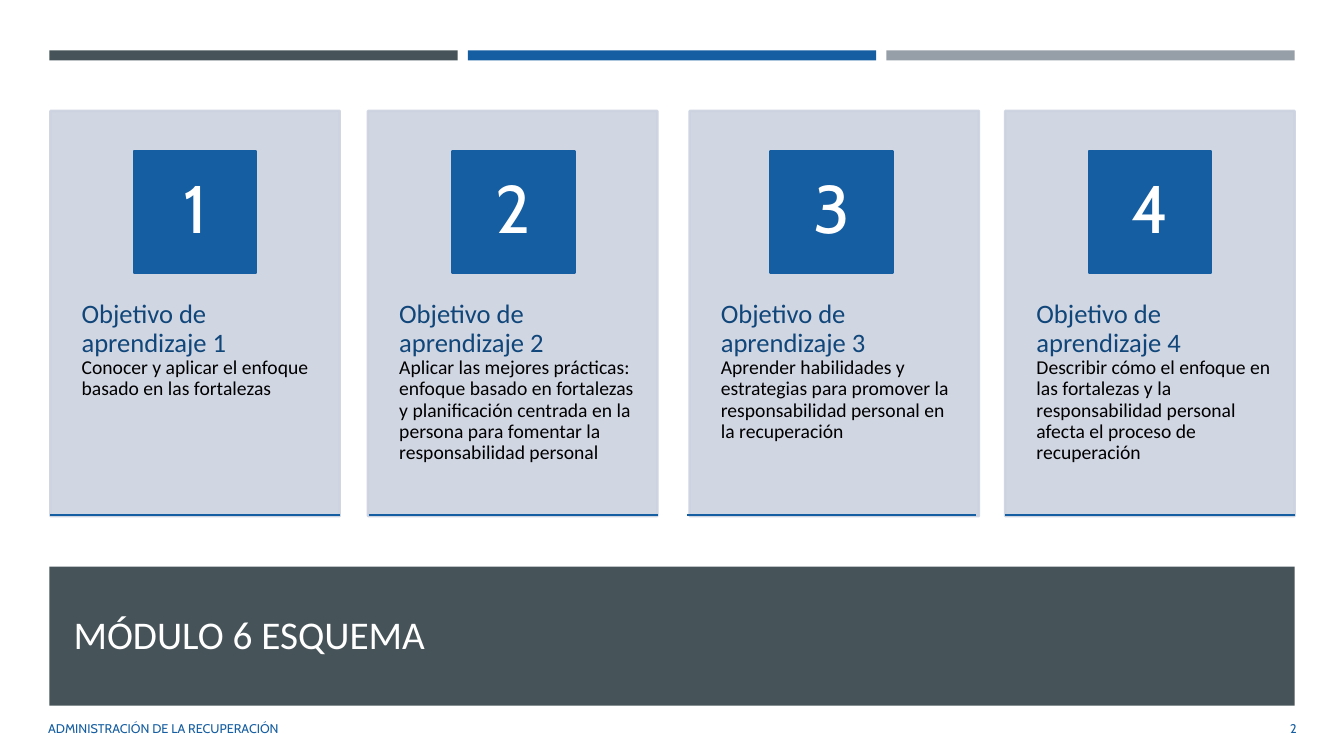
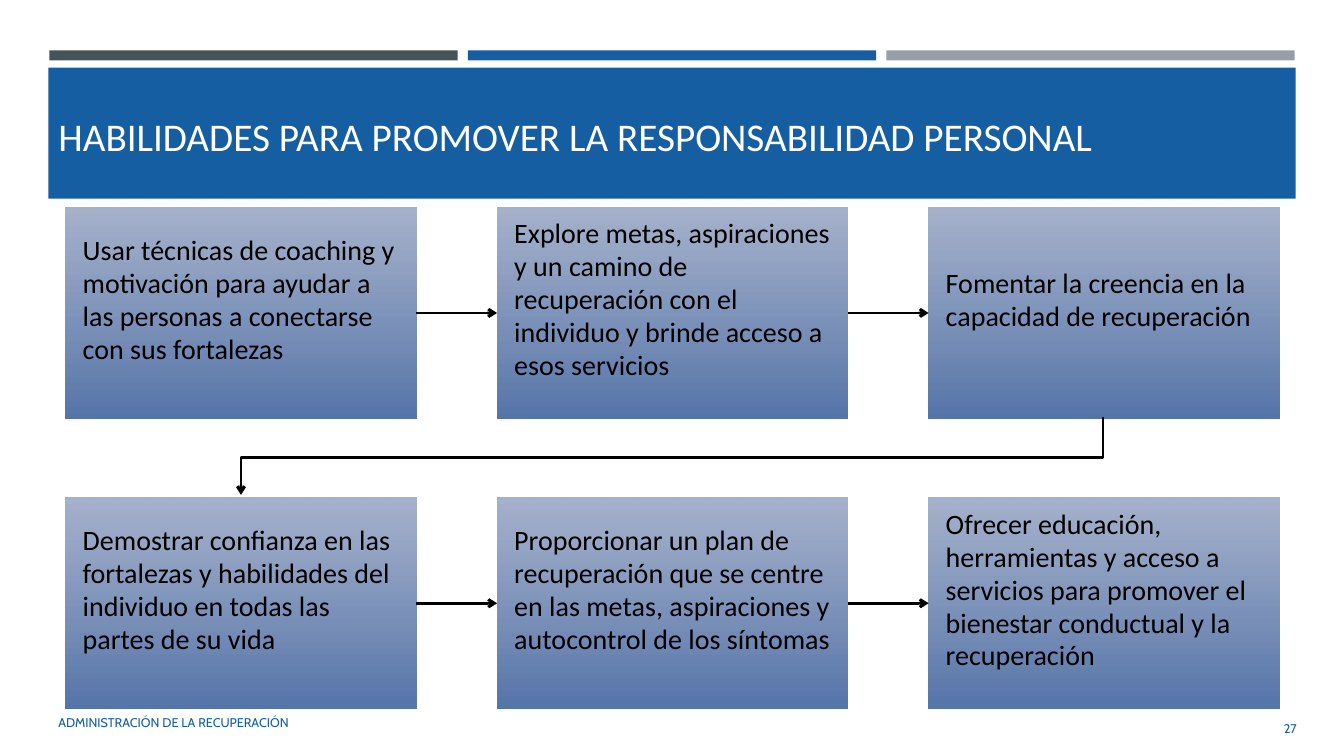
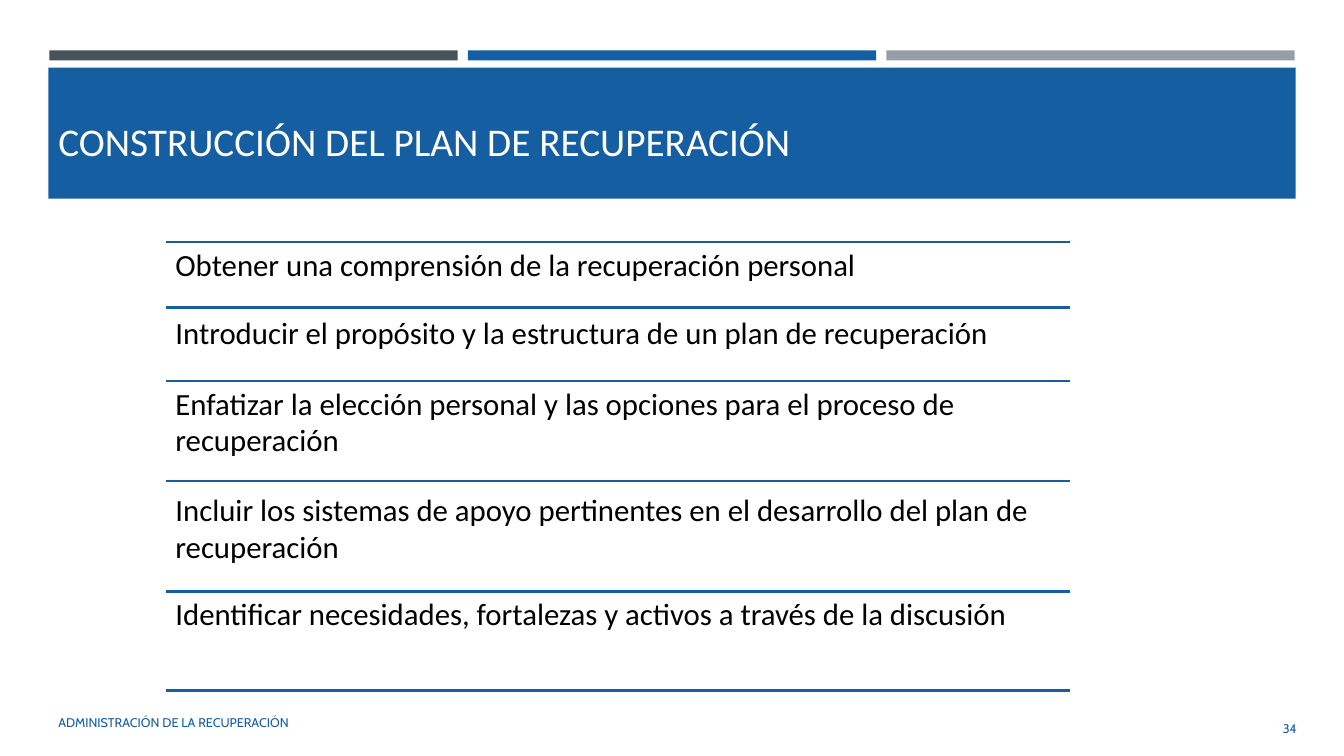
from lxml import etree
from pptx import Presentation
from pptx.dml.color import RGBColor
from pptx.enum.shapes import MSO_CONNECTOR as Link, MSO_SHAPE as Preset
from pptx.enum.text import MSO_ANCHOR as Anchor, MSO_AUTO_SIZE as AutoSize, PP_ALIGN as Align
from pptx.oxml.ns import qn
from pptx.util import Inches, Pt

SLATE = RGBColor(0x46, 0x53, 0x59)
BLUE = RGBColor(0x15, 0x5E, 0xA1)
GREY = RGBColor(0x96, 0x9F, 0xA7)
NAVY = RGBColor(0x10, 0x46, 0x79)
PANEL = RGBColor(0xCC, 0xD2, 0xE0)
STEP_TOP = RGBColor(0x9C, 0xA9, 0xC6)
STEP_BOTTOM = RGBColor(0x56, 0x75, 0xA9)
WHITE = RGBColor(0xFF, 0xFF, 0xFF)
BLACK = RGBColor(0, 0, 0)

FOOTER = "ADMINISTRACIÓN DE LA RECUPERACIÓN"
OUTLINE = "MÓDULO 6 ESQUEMA"
SKILLS = "HABILIDADES PARA PROMOVER LA RESPONSABILIDAD PERSONAL"
PLAN = "CONSTRUCCIÓN DEL PLAN DE RECUPERACIÓN"

GOAL = "Objetivo de aprendizaje"
GOALS = [
    (0.5, "Conocer y aplicar el enfoque basado en las fortalezas"),
    (3.65, "Aplicar las mejores prácticas: enfoque basado en fortalezas y planificación "
           "centrada en la persona para fomentar la responsabilidad personal"),
    (6.84, "Aprender habilidades y estrategias para promover la responsabilidad personal "
           "en la recuperación"),
    (9.97, "Describir cómo el enfoque en las fortalezas y la responsabilidad personal "
           "afecta el proceso de recuperación"),
]
STEPS = [
    "Usar técnicas de coaching y motivación para ayudar a las personas a conectarse "
    "con sus fortalezas",
    "Explore metas, aspiraciones y un camino de recuperación con el individuo y brinde "
    "acceso a esos servicios",
    "Fomentar la creencia en la capacidad de recuperación",
    "Demostrar confianza en las fortalezas y habilidades del individuo en todas las "
    "partes de su vida",
    "Proporcionar un plan de recuperación que se centre en las metas, aspiraciones y "
    "autocontrol de los síntomas",
    "Ofrecer educación, herramientas y acceso a servicios para promover el bienestar "
    "conductual y la recuperación",
]
PLAN_ROWS = [
    (2.4, 2.37, "Obtener una comprensión de la recuperación personal"),
    (3.05, 3.04, "Introducir el propósito y la estructura de un plan de recuperación"),
    (3.78, 3.74, "Enfatizar la elección personal y las opciones para el proceso de recuperación"),
    (4.77, 4.8, "Incluir los sistemas de apoyo pertinentes en el desarrollo del plan de recuperación"),
    (5.87, 5.83, "Identificar necesidades, fortalezas y activos a través de la discusión"),
]
PLAN_END = 6.85


def inches(*values):
    return [Inches(value) for value in values]


def style(item, **values):
    for name, value in values.items():
        setattr(item, name, value)


def write(shape, parts, anchor=Anchor.TOP, align=Align.LEFT, spacing=1.0,
          insets=(0.1, 0.05, 0.1, 0.05)):
    frame = shape.text_frame
    left, top, right, bottom = inches(*insets)
    style(frame, word_wrap=True, auto_size=AutoSize.NONE, vertical_anchor=anchor,
          margin_left=left, margin_top=top, margin_right=right, margin_bottom=bottom)
    para = frame.paragraphs[0]
    style(para, alignment=align, line_spacing=spacing)
    for index, (text, face, size, colour) in enumerate(parts):
        if index:
            para.add_line_break()
        span = para.add_run()
        span.text = text
        style(span.font, name=face, size=Pt(size))
        span.font.color.rgb = colour


def add_text(page, place, parts, **layout):
    box = page.shapes.add_textbox(*inches(*place))
    write(box, parts, **layout)
    return box


def add_block(page, place, fill=None, line=None):
    block = page.shapes.add_shape(Preset.RECTANGLE, *inches(*place))
    block.shadow.inherit = False
    if fill is not None:
        block.fill.solid()
        block.fill.fore_color.rgb = fill
    if line is None:
        block.line.fill.background()
    else:
        block.line.color.rgb = line
        block.line.width = Pt(1.75)
    return block


def fade(colour_node, percent=90):
    etree.SubElement(colour_node, qn("a:alpha")).set("val", str(percent * 1000))


def add_line(page, start, end, colour, width):
    line = page.shapes.add_connector(Link.STRAIGHT, *inches(*start, *end))
    line.line.color.rgb = colour
    line.line.width = Pt(width)
    etree.SubElement(line.element.spPr, qn("a:effectLst"))
    return line


def add_arrowhead(shape):
    outline = shape.line._get_or_add_ln()
    etree.SubElement(outline, qn("a:tailEnd")).set("type", "arrow")


def new_page(deck, title, number, band, band_colour, title_place, footer_place):
    page = deck.slides.add_slide(deck.slide_layouts[5])
    for column, colour in enumerate((SLATE, BLUE, GREY)):
        add_block(page, (0.49 + column * 4.15, 0.5, 4.05, 0.1), colour)
    add_block(page, band, band_colour)
    heading = page.shapes.title
    left, top, width, height = inches(*title_place)
    style(heading, left=left, top=top, width=width, height=height)
    write(heading, [(title, "Calibri", 28, WHITE)], anchor=Anchor.MIDDLE)
    page.shapes.element.append(heading.element)
    add_text(page, footer_place, [(FOOTER, "Cabin", 9, BLUE)], anchor=Anchor.MIDDLE)
    add_text(page, (11.81, 7.03, 1.15, 0.4), [(str(number), "Cabin", 9, BLUE)],
             anchor=Anchor.MIDDLE, align=Align.RIGHT)
    return page


def blue_page(deck, title, number, title_top):
    return new_page(deck, title, number, (0.48, 0.67, 12.37, 1.3), BLUE,
                    (0.48, title_top, 12.37, 1.11), (0.48, 6.97, 7.46, 0.4))


def outline_page(deck):
    page = new_page(deck, OUTLINE, 2, (0.49, 5.62, 12.35, 1.38), SLATE,
                    (0.63, 5.76, 12.06, 1.05), (0.38, 7.03, 7.56, 0.4))
    width, badge_side = 2.87, 1.21
    pitch = (GOALS[-1][0] - GOALS[0][0]) / (len(GOALS) - 1)
    for index, (left, goal) in enumerate(GOALS):
        column = GOALS[0][0] + index * pitch
        panel = add_block(page, (left, 1.1, width, 4.02), PANEL, PANEL)
        for colour_node in panel.element.spPr.iter(qn("a:srgbClr")):
            fade(colour_node)
        add_text(page, (left, 2.62, width, 2.41),
                 [(f"{GOAL} {index + 1}", "Calibri", 19, NAVY), (goal, "Calibri", 14, BLACK)],
                 spacing=0.9, insets=(0.31, 0.36, 0.22, 0.36))
        badge = add_block(page, (column + (width - badge_side) / 2, 1.5, badge_side, badge_side),
                          BLUE, BLUE)
        write(badge, [(str(index + 1), "Cabin", 48, WHITE)], anchor=Anchor.MIDDLE,
              align=Align.CENTER, spacing=0.9, insets=(0.09, 0.01, 0.09, 0.01))
        add_line(page, (column, 5.11), (column + width, 5.11), BLUE, 1.75)


def skills_page(deck):
    page = blue_page(deck, SKILLS, 27, 0.79)
    columns, width, height = 3, 3.48, 2.09
    boxes = []
    for index, step in enumerate(STEPS):
        row, column = divmod(index, columns)
        left, top = 0.65 + column * 4.28, 2.06 + row * 2.88
        box = add_block(page, (left, top, width, height))
        box.fill.gradient()
        box.fill.gradient_angle = 270
        for stop, colour in zip(box.fill.gradient_stops, (STEP_TOP, STEP_BOTTOM)):
            stop.color.rgb = colour
        fade(next(box.element.spPr.iter(qn("a:srgbClr"))))
        write(box, [(step, "Calibri", 20, BLACK)], anchor=Anchor.MIDDLE, spacing=0.98,
              insets=(0.17, 0, 0.17, 0.26))
        if column:
            middle = top + height / 2
            arrow = add_line(page, (left - 0.8, middle), (left, middle), BLACK, 2)
            arrow.begin_connect(boxes[-1], 3)
            arrow.end_connect(box, 1)
            add_arrowhead(arrow)
        boxes.append(box)
    start_x, end_x = 10.94, 2.39
    builder = page.shapes.build_freeform(*inches(start_x, 4.14))
    builder.add_line_segments(
        [inches(start_x, 4.54), inches(end_x, 4.54), inches(end_x, 4.91)], close=False)
    turn = builder.convert_to_shape()
    turn.shadow.inherit = False
    turn.fill.background()
    turn.line.color.rgb = BLACK
    turn.line.width = Pt(2)
    add_arrowhead(turn)


def plan_page(deck):
    page = blue_page(deck, PLAN, 34, 0.84)
    left, width = 1.65, 8.96
    for rule, top, text in PLAN_ROWS:
        add_text(page, (left, top, width, 0.85), [(text, "Calibri", 22, BLACK)],
                 spacing=0.98, insets=(0.09, 0.09, 0.09, 0.09))
    for rule in [row[0] for row in PLAN_ROWS] + [PLAN_END]:
        add_line(page, (left, rule), (left + width, rule), BLUE, 1.75)


def main():
    deck = Presentation()
    style(deck, slide_width=Inches(13.33), slide_height=Inches(7.5))
    outline_page(deck)
    skills_page(deck)
    plan_page(deck)
    deck.save("out.pptx")


if __name__ == "__main__":
    main()
